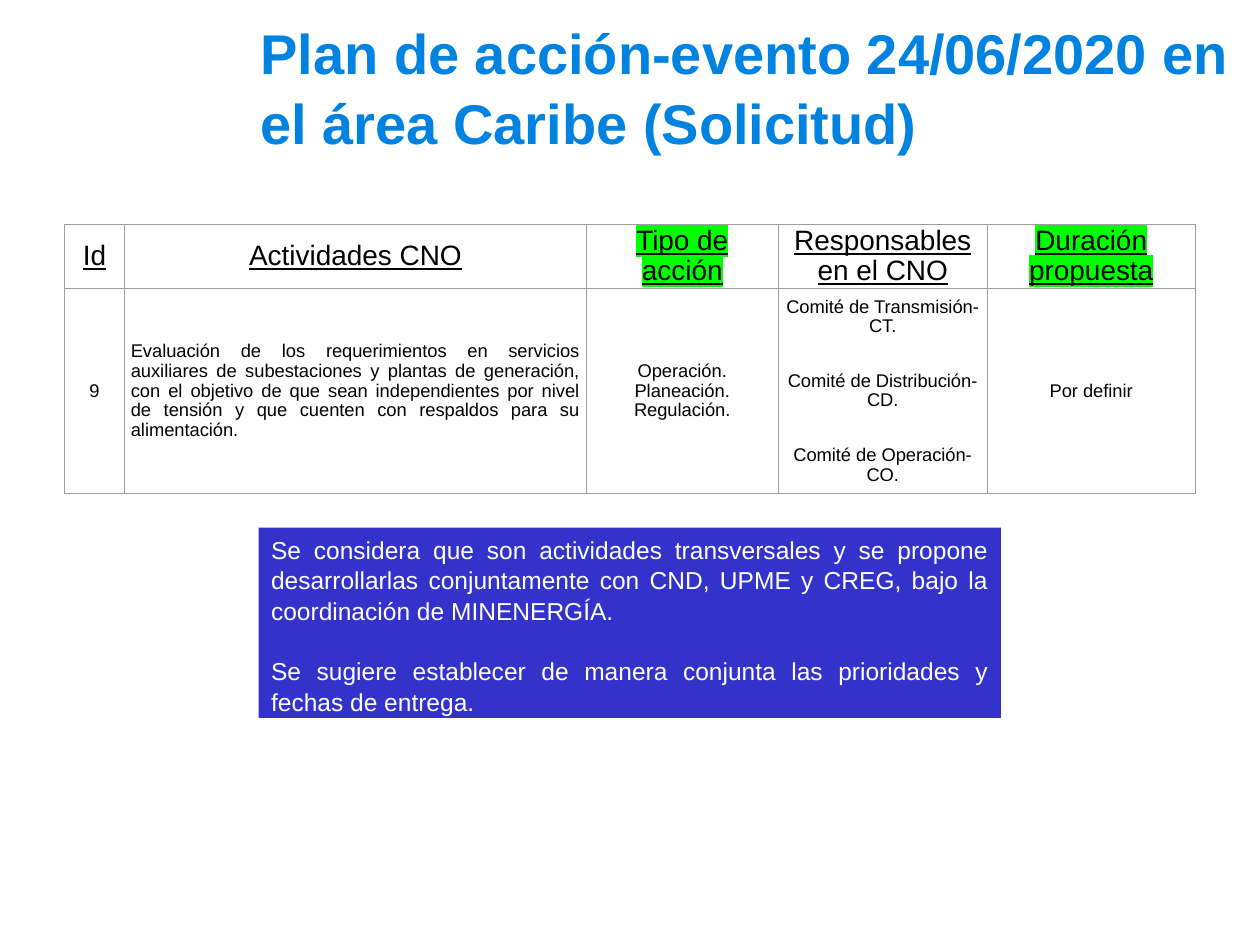
from dataclasses import dataclass

from lxml import etree
from pptx import Presentation
from pptx.dml.color import RGBColor
from pptx.enum import shapes, text
from pptx.oxml import ns
from pptx.util import Pt


@dataclass(frozen=True)
class Theme:
    font: str = "Arial"
    title: str = "0082E0"
    ink: str = "000000"
    border: str = "9E9E9E"
    highlight: str = "00FF00"
    note_fill: str = "3333CC"
    note_ink: str = "FFFFFF"
    title_size: float = 32
    header_size: float = 16
    body_size: float = 10.5
    note_size: float = 14
    border_width: float = 0.75


@dataclass(frozen=True)
class Style:
    size: float
    color: str
    align: text.PP_ALIGN = text.PP_ALIGN.CENTER
    bold: bool = False
    underline: bool = False
    highlight: bool = False
    spacing: float = 1.0
    gap: float = 0


@dataclass(frozen=True)
class Column:
    width: float
    header: str
    activity: tuple[str, ...]
    align: text.PP_ALIGN = text.PP_ALIGN.CENTER
    highlight: bool = False
    gap: float = 0


THEME = Theme()
CELL_SPACING = 0.96
NOTE_SPACING = 1.04

COLUMNS = (
    Column(34.4, "Id", ("9",)),
    Column(263.9, "Actividades CNO", (
        "Evaluación de los requerimientos en servicios auxiliares de "
        "subestaciones y plantas de generación, con el objetivo de que sean "
        "independientes por nivel de tensión y que cuenten con respaldos "
        "para su alimentación.",), align=text.PP_ALIGN.JUSTIFY),
    Column(109.7, "Tipo de acción",
           ("Operación.", "Planeación.", "Regulación."), highlight=True),
    Column(119.4, "Responsables en el CNO",
           ("Comité de Transmisión-CT.", "Comité de Distribución-CD.",
            "Comité de Operación-CO."), gap=20),
    Column(118.9, "Duración propuesta", ("Por definir",), highlight=True),
)
ROW_HEIGHTS = (35.4, 117)
NOTES = (
    "Se considera que son actividades transversales y se propone "
    "desarrollarlas conjuntamente con CND, UPME y CREG, bajo la "
    "coordinación de MINENERGÍA.",
    "Se sugiere establecer de manera conjunta las prioridades y fechas de "
    "entrega.",
)


def highlight_run(run) -> None:
    properties = run.font._element
    mark = etree.SubElement(properties, ns.qn("a:highlight"))
    etree.SubElement(mark, ns.qn("a:srgbClr"), val=THEME.highlight)


def write(frame, lines: tuple[str, ...], style: Style) -> None:
    for index, line in enumerate(lines):
        paragraph = frame.paragraphs[0] if index == 0 else frame.add_paragraph()
        run = paragraph.add_run()
        run.text = line
        paragraph.alignment = style.align
        paragraph.line_spacing = style.spacing
        if index:
            paragraph.space_before = Pt(style.gap)
        font = paragraph.font
        font.name = THEME.font
        font.size = Pt(style.size)
        font.bold = style.bold
        font.underline = style.underline
        font.color.rgb = RGBColor.from_string(style.color)
        if style.highlight:
            highlight_run(run)


def outline_cell(cell) -> None:
    properties = cell._tc.get_or_add_tcPr()
    for position, side in enumerate(("lnL", "lnR", "lnT", "lnB")):
        line = etree.Element(ns.qn(f"a:{side}"), w=str(Pt(THEME.border_width)))
        fill = etree.SubElement(line, ns.qn("a:solidFill"))
        etree.SubElement(fill, ns.qn("a:srgbClr"), val=THEME.border)
        properties.insert(position, line)


def fill_cell(cell, lines: tuple[str, ...], style: Style) -> None:
    cell.fill.background()
    outline_cell(cell)
    cell.margin_left = cell.margin_right = Pt(3.6)
    cell.margin_top = cell.margin_bottom = Pt(0)
    cell.vertical_anchor = text.MSO_ANCHOR.MIDDLE
    write(cell.text_frame, lines, style)


def add_title(slide) -> None:
    title = slide.shapes.add_textbox(Pt(141.8), Pt(15.1), Pt(578.2), Pt(67.7))
    frame = title.text_frame
    frame.word_wrap = True
    frame.vertical_anchor = text.MSO_ANCHOR.MIDDLE
    write(frame, ("Plan de acción-evento 24/06/2020 en el área Caribe (Solicitud)",),
          Style(THEME.title_size, THEME.title, text.PP_ALIGN.LEFT, bold=True,
                spacing=NOTE_SPACING))


def add_plan(slide) -> None:
    plan = slide.shapes.add_table(
        len(ROW_HEIGHTS), len(COLUMNS), Pt(36.8), Pt(128.2),
        Pt(sum(column.width for column in COLUMNS)), Pt(sum(ROW_HEIGHTS))).table
    for row, height in zip(plan.rows, ROW_HEIGHTS):
        row.height = Pt(height)
    for index, column in enumerate(COLUMNS):
        plan.columns[index].width = Pt(column.width)
        fill_cell(plan.cell(0, index), (column.header,),
                  Style(THEME.header_size, THEME.ink, underline=True,
                        highlight=column.highlight, spacing=CELL_SPACING))
        fill_cell(plan.cell(1, index), column.activity,
                  Style(THEME.body_size, THEME.ink, column.align,
                        spacing=CELL_SPACING, gap=column.gap))


def add_note(slide) -> None:
    note = slide.shapes.add_shape(shapes.MSO_SHAPE.RECTANGLE,
                                  Pt(147.8), Pt(301.5), Pt(424.2), Pt(108.8))
    note.shadow.inherit = False
    note.fill.solid()
    note.fill.fore_color.rgb = RGBColor.from_string(THEME.note_fill)
    note.line.fill.background()
    frame = note.text_frame
    frame.word_wrap = True
    frame.vertical_anchor = text.MSO_ANCHOR.TOP
    write(frame, NOTES, Style(THEME.note_size, THEME.note_ink,
                              text.PP_ALIGN.JUSTIFY, spacing=NOTE_SPACING,
                              gap=16.8))


def main() -> None:
    deck = Presentation()
    deck.slide_width, deck.slide_height = Pt(720), Pt(540)
    slide = deck.slides.add_slide(deck.slide_layouts[6])
    add_title(slide)
    add_plan(slide)
    add_note(slide)
    deck.save("out.pptx")


if __name__ == "__main__":
    main()
